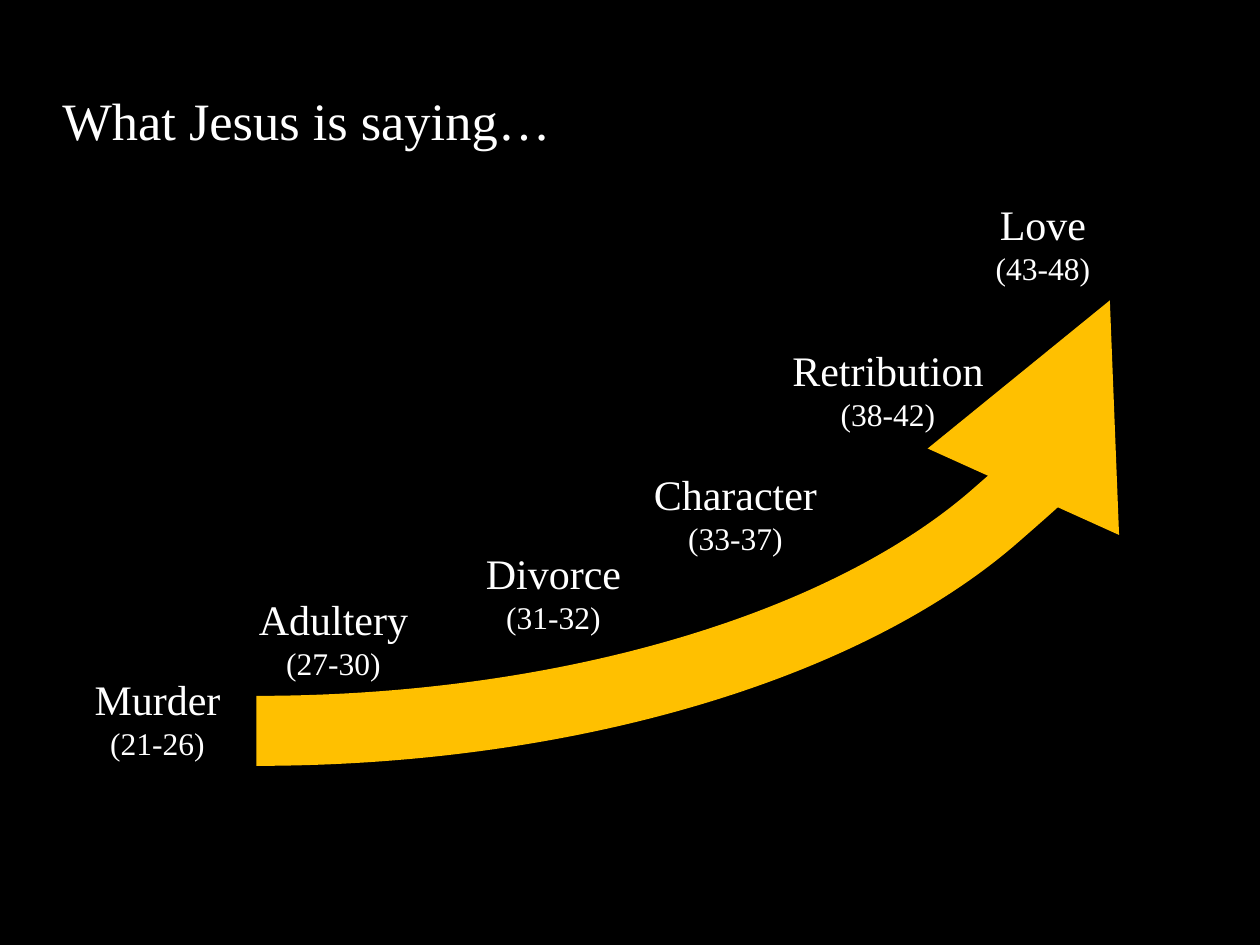
from pptx import Presentation
from pptx.dml.color import RGBColor
from pptx.enum.shapes import MSO_SHAPE
from pptx.enum.text import MSO_AUTO_SIZE, PP_ALIGN
from pptx.oxml.ns import qn
from pptx.util import Emu, Pt
from lxml import etree

RECTANGLE, ARC = MSO_SHAPE.RECTANGLE, MSO_SHAPE.ARC
LEFT, CENTER = PP_ALIGN.LEFT, PP_ALIGN.CENTER
GROW = MSO_AUTO_SIZE.SHAPE_TO_FIT_TEXT

SCALE = 914400 // 126
SLIDE = (1260, 945)
TITLE = ("What Jesus is saying…", (50, 82, 1103, 77))
CURVE = (-597, -130, 1707, 861)
LABEL_HEIGHT = 102
STEPS = [
    ("Murder", "(21-26)", 157, 667, 163),
    ("Adultery", "(27-30)", 333, 587, 203),
    ("Divorce", "(31-32)", 553, 541, 203),
    ("Character", "(33-37)", 735, 462, 203),
    ("Retribution", "(38-42)", 888, 338, 228),
    ("Love", "(43-48)", 1043, 192, 228),
]
THEME = {
    "font": "Times New Roman",
    "paper": RGBColor.from_string("000000"),
    "ink": RGBColor.from_string("FFFFFF"),
    "arrow": RGBColor.from_string("FFC000"),
    "title": Pt(30),
    "topic": Pt(24),
    "verses": Pt(18),
    "stroke": Pt(40),
}


def emu(lengths):
    return [Emu(length * SCALE) for length in lengths]


def add_text(page, place, lines, align):
    box = page.shapes.add_textbox(*emu(place))
    frame = box.text_frame
    frame.word_wrap = True
    frame.auto_size = GROW
    for index, (text, size) in enumerate(lines):
        para = frame.add_paragraph() if index else frame.paragraphs[0]
        para.alignment = align
        span = para.add_run()
        span.text = text
        for name, value in {"name": THEME["font"], "size": THEME[size]}.items():
            setattr(span.font, name, value)
        span.font.color.rgb = THEME["ink"]


def add_backdrop(page):
    backdrop = page.shapes.add_shape(RECTANGLE, *emu((0, 0, *SLIDE)))
    backdrop.shadow.inherit = False
    backdrop.fill.solid()
    backdrop.fill.fore_color.rgb = THEME["paper"]
    backdrop.line.fill.background()


def add_curved_arrow(page):
    arrow = page.shapes.add_shape(ARC, *emu(CURVE))
    arrow.shadow.inherit = False
    arrow.fill.background()
    arrow.line.color.rgb = THEME["arrow"]
    arrow.line.width = THEME["stroke"]
    properties = arrow.element.spPr
    properties.find(qn("a:xfrm")).set("flipV", "1")
    etree.SubElement(properties.find(qn("a:ln")), qn("a:tailEnd"), type="triangle")


def main():
    deck = Presentation()
    deck.slide_width, deck.slide_height = emu(SLIDE)
    page = deck.slides.add_slide(deck.slide_layouts[6])
    add_backdrop(page)
    title, place = TITLE
    add_text(page, place, [(title, "title")], LEFT)
    add_curved_arrow(page)
    for topic, verses, middle, top, width in STEPS:
        place = (middle - width // 2, top, width, LABEL_HEIGHT)
        add_text(page, place, [(topic, "topic"), (verses, "verses")], CENTER)
    deck.save("out.pptx")


if __name__ == "__main__":
    main()
